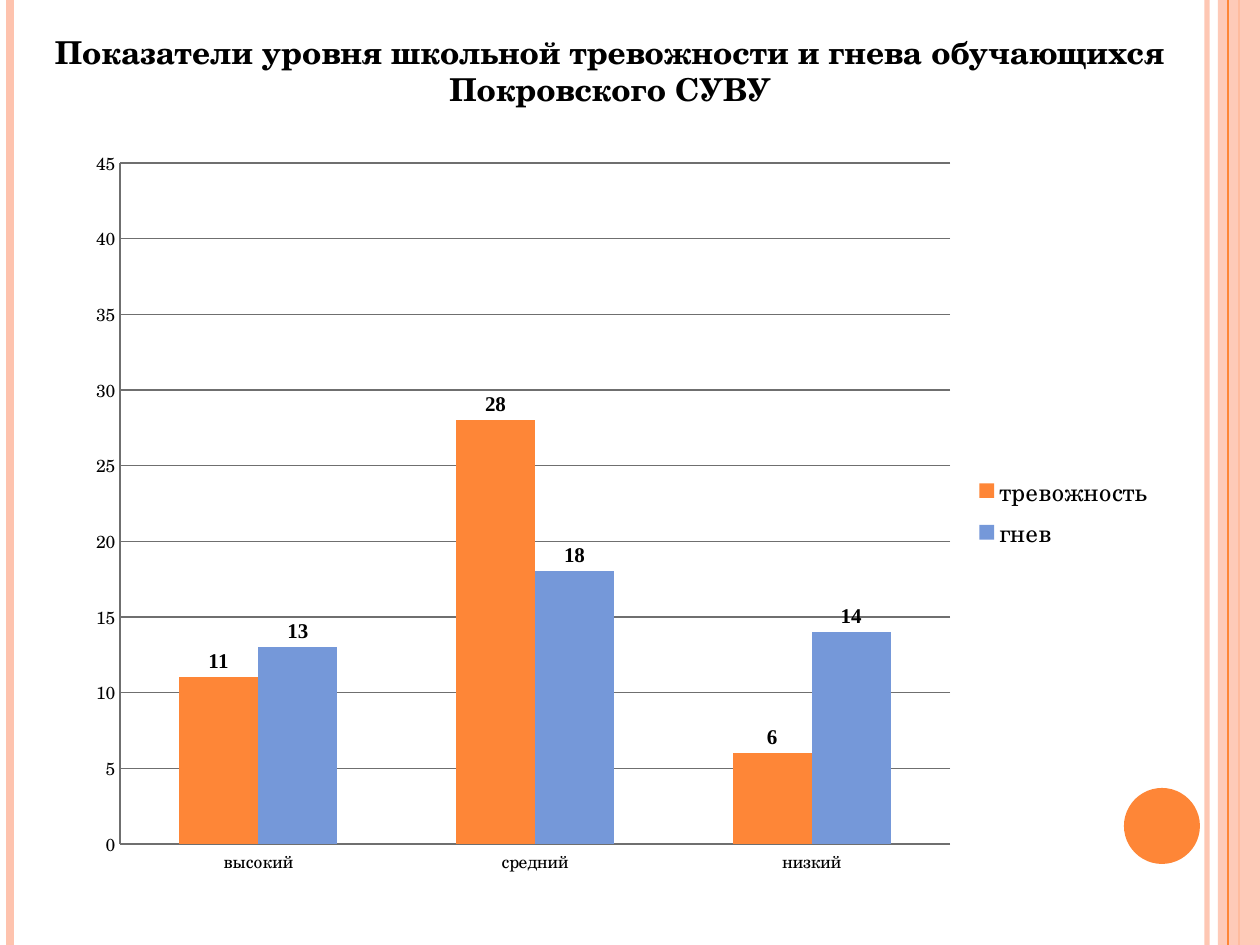
from dataclasses import dataclass

from lxml import etree
from pptx import Presentation
from pptx.chart.data import CategoryChartData
from pptx.dml.color import RGBColor
from pptx.enum.chart import XL_CHART_TYPE, XL_LABEL_POSITION, XL_LEGEND_POSITION, XL_TICK_MARK
from pptx.enum.shapes import MSO_CONNECTOR, MSO_SHAPE
from pptx.enum.text import MSO_ANCHOR, PP_ALIGN
from pptx.oxml import parse_xml
from pptx.oxml.ns import nsdecls, qn
from pptx.util import Emu, Pt

COLUMN = XL_CHART_TYPE.COLUMN_CLUSTERED
OUTSIDE_END = XL_LABEL_POSITION.OUTSIDE_END
LEGEND_RIGHT = XL_LEGEND_POSITION.RIGHT
NO_TICK = XL_TICK_MARK.NONE
STRAIGHT = MSO_CONNECTOR.STRAIGHT
RECT, OVAL = MSO_SHAPE.RECTANGLE, MSO_SHAPE.OVAL
MIDDLE, CENTER = MSO_ANCHOR.MIDDLE, PP_ALIGN.CENTER

BLACK = RGBColor(0x00, 0x00, 0x00)
ORANGE = RGBColor(0xFE, 0x86, 0x37)
PEACH = RGBColor(0xFE, 0xC3, 0xAE)
BLUE = RGBColor(0x75, 0x98, 0xD9)
GRAY = RGBColor(0x6F, 0x6F, 0x6F)

SERIF, LABEL_FONT = "TeX Gyre Schola", "Times New Roman"
WIDTH, HEIGHT = 1260, 945
EMU_PER_PX = 914400 / 126


@dataclass
class Box:
    left: int
    top: int
    width: int
    height: int


@dataclass
class Stripe:
    x: int
    color: RGBColor
    weight: float
    opacity: int = 100


@dataclass
class Series:
    name: str
    values: tuple
    color: RGBColor


TITLE_BOX = Box(35, 26, 1150, 89)
CHART_BOX = Box(74, 135, 1091, 753)
PLOT_BOX = Box(120, 163, 830, 681)
BAND_BOX = Box(1218, 0, 42, HEIGHT)
DOT_BOX = Box(1124, 788, 76, 76)
STRIPES_BEHIND = [
    Stripe(1207, PEACH, 3, 93),
    Stripe(10, PEACH, 4.5),
    Stripe(1239, ORANGE, 1.5),
]
STRIPE_FRONT = Stripe(1228, ORANGE, 0.75)
TITLE = "Показатели уровня школьной тревожности и гнева обучающихся Покровского СУВУ"
CATEGORIES = ("высокий", "средний", "низкий")
SERIES = [
    Series("тревожность", (11, 28, 6), ORANGE),
    Series("гнев", (13, 18, 14), BLUE),
]


def px(n: int) -> Emu:
    return Emu(round(n * EMU_PER_PX))


def place(box: Box) -> tuple:
    return px(box.left), px(box.top), px(box.width), px(box.height)


def set_opacity(sp, percent: int) -> None:
    color = next(sp._element.spPr.iter(qn("a:srgbClr")))
    etree.SubElement(color, qn("a:alpha")).set("val", str(percent * 1000))


def set_font(font, size: int, name: str = SERIF, bold: bool = False) -> None:
    font.size, font.name, font.bold = Pt(size), name, bold
    font.color.rgb = BLACK


def add_stripe(s, stripe: Stripe) -> None:
    x = px(stripe.x)
    line = s.shapes.add_connector(STRAIGHT, x, 0, x, px(HEIGHT))
    line.line.color.rgb = stripe.color
    line.line.width = Pt(stripe.weight)
    if stripe.opacity < 100:
        set_opacity(line, stripe.opacity)
    etree.SubElement(line._element.spPr, qn("a:effectLst"))


def add_filled(s, preset, box: Box, color: RGBColor, opacity: int = 100) -> None:
    sp = s.shapes.add_shape(preset, *place(box))
    sp.shadow.inherit = False
    sp.fill.solid()
    sp.fill.fore_color.rgb = color
    sp.line.fill.background()
    if opacity < 100:
        set_opacity(sp, opacity)


def add_title(s) -> None:
    sp = s.shapes.title
    sp.left, sp.top, sp.width, sp.height = place(TITLE_BOX)
    tf = sp.text_frame
    tf.word_wrap = True
    tf.vertical_anchor = MIDDLE
    p = tf.paragraphs[0]
    p.alignment = CENTER
    r = p.add_run()
    r.text = TITLE
    set_font(r.font, 18, bold=True)


def set_plot_layout(chart) -> None:
    fractions = {
        "x": (PLOT_BOX.left - CHART_BOX.left) / CHART_BOX.width,
        "y": (PLOT_BOX.top - CHART_BOX.top) / CHART_BOX.height,
        "w": PLOT_BOX.width / CHART_BOX.width,
        "h": PLOT_BOX.height / CHART_BOX.height,
    }
    sizes = "".join(f'<c:{key} val="{value:.4f}"/>' for key, value in fractions.items())
    plot_area = chart._chartSpace.chart.plotArea
    for old in plot_area.findall(qn("c:layout")):
        plot_area.remove(old)
    plot_area.insert(0, parse_xml(
        f'<c:layout {nsdecls("c")}><c:manualLayout><c:layoutTarget val="inner"/>'
        f'<c:xMode val="edge"/><c:yMode val="edge"/>{sizes}</c:manualLayout></c:layout>'))


def add_level_chart(s) -> None:
    data = CategoryChartData()
    data.categories = CATEGORIES
    for series in SERIES:
        data.add_series(series.name, series.values)
    chart = s.shapes.add_chart(COLUMN, *place(CHART_BOX), data).chart
    chart.has_title = False
    set_font(chart.font, 10)
    set_plot_layout(chart)

    chart.has_legend = True
    chart.legend.position = LEGEND_RIGHT
    chart.legend.include_in_layout = False
    set_font(chart.legend.font, 14)

    value_axis = chart.value_axis
    value_axis.minimum_scale, value_axis.maximum_scale = 0, 45
    value_axis.major_unit = 5
    value_axis.has_major_gridlines = True
    value_axis.major_gridlines.format.line.color.rgb = GRAY
    for axis in (chart.category_axis, value_axis):
        axis.major_tick_mark = axis.minor_tick_mark = NO_TICK
        axis.format.line.color.rgb = GRAY

    plot = chart.plots[0]
    plot.gap_width, plot.overlap = 150, 0
    plot.vary_by_categories = False
    for bars, series in zip(plot.series, SERIES):
        bars.format.fill.solid()
        bars.format.fill.fore_color.rgb = series.color
        labels = bars.data_labels
        labels.show_value = True
        labels.position = OUTSIDE_END
        set_font(labels.font, 12, LABEL_FONT, True)


def main() -> None:
    """Build the slide on school anxiety and anger levels."""
    prs = Presentation()
    prs.slide_width, prs.slide_height = px(WIDTH), px(HEIGHT)
    s = prs.slides.add_slide(prs.slide_layouts[5])
    for stripe in STRIPES_BEHIND:
        add_stripe(s, stripe)
    add_filled(s, RECT, BAND_BOX, PEACH, 87)
    add_stripe(s, STRIPE_FRONT)
    add_filled(s, OVAL, DOT_BOX, ORANGE)
    add_title(s)
    add_level_chart(s)
    prs.save("out.pptx")


if __name__ == "__main__":
    main()
